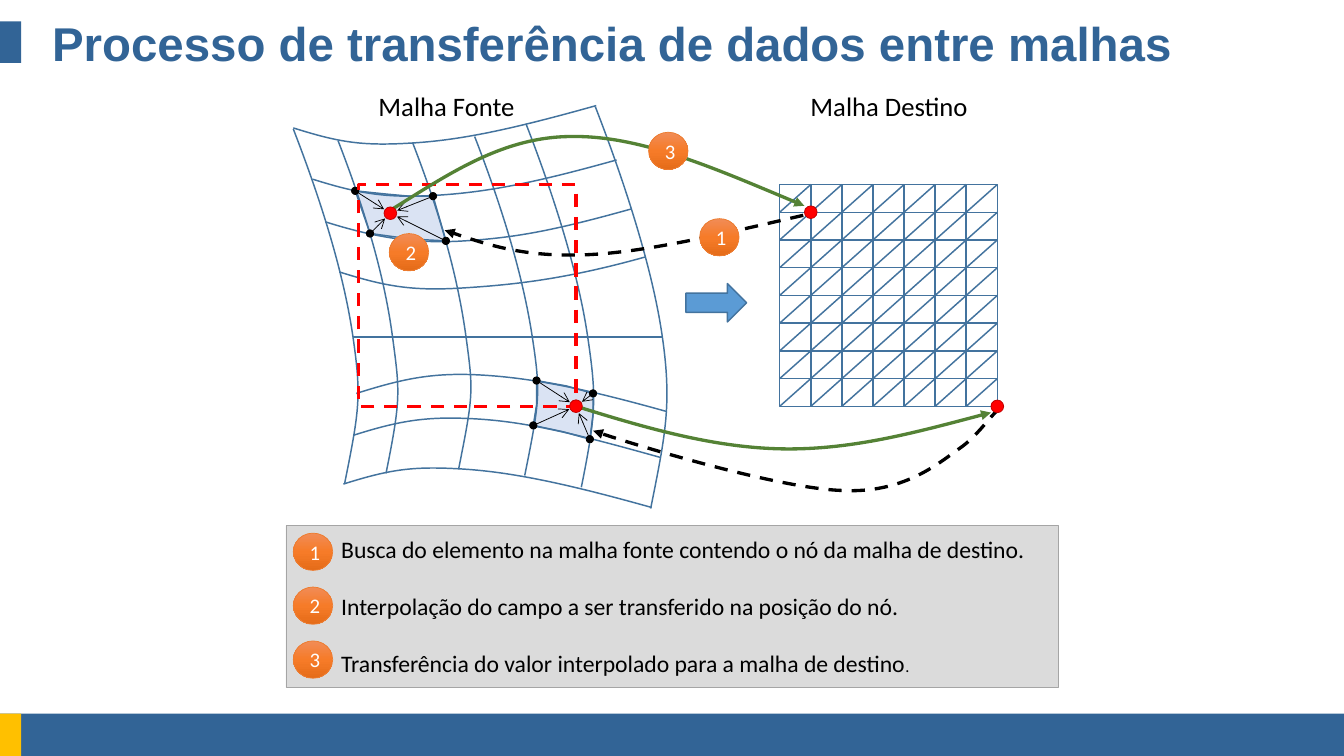
import math
from copy import deepcopy

from lxml import etree
from pptx import Presentation
from pptx.dml.color import RGBColor
from pptx.enum import dml, shapes, text
from pptx.oxml import ns
from pptx.util import Pt

COLORS = {
    "navy": "326496", "gold": "FFC000", "white": "FFFFFF", "black": "000000",
    "panel": "DBDBDB", "panel_edge": "A5A5A5", "mesh": "43739E", "element": "DAE3F3",
    "arrow": "5B9BD5", "red": "FF0000", "dark_red": "C00000", "green": "548235",
    "orange": "ED7D31", "orange_top": "F18C57", "orange_mid": "F67B28", "orange_low": "E56C19",
}
STEPS = [
    "Busca do elemento na malha fonte contendo o nó da malha de destino.",
    "Interpolação do campo a ser transferido na posição do nó.",
    "Transferência do valor interpolado para a malha de destino",
]
FIGURE = (198, 71)
MESH_MIDDLE = 156.5
# Columns: start, middle x, middle handle, end
MESH_COLUMNS = [
    ((0, 16.1), 40.3, (5.8, 40.3), (34.6, 255.9)),
    ((30.2, 24), 67, (5, 37.4), (62.6, 248.7)),
    ((80.6, 25.5), 116.6, (5, 36.7), (111.6, 245.8)),
    ((122.4, 21.2), 161.3, (5.8, 38.2), (156.2, 250.1)),
    ((157, 12.5), 198.7, (6, 41), (194.4, 258)),
    ((203.8, 1), 249.1, (6.5, 45.4), (241.2, 272.4)),
]
# Rows: start, middle, end
MESH_ROWS = [
    ((0, 15.4), (81.4, 25.5), (204.5, 0.3)),
    ((13, 50), (97.9, 60.8), (218.2, 37)),
    ((21.6, 78.8), (115.2, 91.7), (228.2, 70.1)),
    ((31, 112.6), (115.2, 123.4), (237.6, 102.5)),
    ((42.5, 194.7), (128.9, 182.4), (252, 206.9)),
    ((41, 222.8), (125.3, 212), (247.7, 237.9)),
    ((33.8, 255.9), (115.2, 245.8), (241.9, 271.7)),
]
# Elements: outline, indexes of the corners, interpolated node
ELEMENTS = [
    ([(41.8, 57.9), (61.9, 60), (77.8, 61.5), (94.3, 61.5), (103, 91.7), (89.3, 91),
      (72.7, 89.6), (51.8, 86.7)], (0, 3, 4, 7), (65.5, 73)),
    ([(164.2, 186), (184.3, 189.6), (202.3, 194.7), (202.3, 209.1), (200.2, 225.6),
      (182.2, 220.6), (162, 216.3), (164.2, 202.6)], (0, 2, 4, 6), (190.8, 203.3)),
]
SEARCHES = [
    [(344.2, 74.4), (290.9, 86.7), (237.6, 99.6), (196.6, 101.1), (156.2, 102.5),
     (129.6, 93.9), (102.2, 84.5)],
    [(477.4, 204.8), (471.6, 207.6), (463, 222.8), (449.3, 232.1), (434.2, 242.9),
     (411.1, 262.4), (370.1, 260.2), (329, 258.8), (229, 229.2), (202.3, 219.9)],
]
TRANSFERS = [
    [(67, 70.1), (105.1, 46.4), (141.8, 21.2), (187.9, 21.2), (234.7, 20.4),
     (289.4, 44.9), (344.9, 68)],
    [(190.8, 203.3), (236.9, 217.7), (283.7, 231.4), (330.5, 232.1), (377.3, 232.8),
     (424.1, 219.9), (470.9, 207.6)],
]
DOMAIN = (146.9, 149.8)
GRID_COLUMNS, GRID_ROWS = 7, 8


def rgb(name):
    return RGBColor.from_string(COLORS[name])


def shift(origin, point):
    return origin[0] + point[0], origin[1] + point[1]


def style(part, fill=None, line=None, width=1, dash=False, tail=None):
    part.shadow.inherit = False
    if fill:
        part.fill.solid()
        part.fill.fore_color.rgb = rgb(fill)
    else:
        part.fill.background()
    style_line(part, line, width, dash, tail)


def style_line(part, color, width, dash=False, tail=None):
    if not color:
        part.line.fill.background()
        return
    part.line.color.rgb = rgb(color)
    part.line.width = Pt(width)
    if dash:
        part.line.dash_style = dml.MSO_LINE.DASH
    if tail:
        ln = part._element.spPr.find(ns.qn("a:ln"))
        etree.SubElement(ln, ns.qn("a:tailEnd"), type=tail)


def add_preset(slide, kind, box, **look):
    part = slide.shapes.add_shape(kind, *map(Pt, box))
    style(part, **look)
    return part


def add_rect(slide, box, **look):
    return add_preset(slide, shapes.MSO_SHAPE.RECTANGLE, box, **look)


def add_dot(slide, center, size, **look):
    box = (center[0] - size / 2, center[1] - size / 2, size, size)
    add_preset(slide, shapes.MSO_SHAPE.OVAL, box, **look)


def add_line(slide, start, end, color="mesh", width=1, tail=None):
    line = slide.shapes.add_connector(shapes.MSO_CONNECTOR.STRAIGHT, *map(Pt, (*start, *end)))
    style_line(line, color, width, tail=tail)
    etree.SubElement(line._element.spPr, ns.qn("a:effectLst"))
    return line


def add_outline(slide, origin, points, closed=False, **look):
    start, *rest = [tuple(map(Pt, shift(origin, p))) for p in points]
    builder = slide.shapes.build_freeform(*start)
    builder.add_line_segments(rest, close=closed)
    outline = builder.convert_to_shape()
    style(outline, **look)
    return outline


def add_curve(slide, origin, points, **look):
    """Draw a Bézier chain: a start, then two handles and an end per segment."""
    curve = add_outline(slide, origin, points, **look)
    steps = list(curve._element.iter(ns.qn("a:lnTo")))
    for first, second, third in zip(steps[::3], steps[1::3], steps[2::3]):
        first.tag = ns.qn("a:cubicBezTo")
        for step in (second, third):
            first.append(step[0])
            step.getparent().remove(step)


def add_text(frame, content, size=18, font="Calibri", color="black", bold=False, align=None,
             anchor=text.MSO_ANCHOR.TOP, wrap=True, gap=0):
    """Write one paragraph per item of content."""
    frame.word_wrap, frame.vertical_anchor = wrap, anchor
    for index, words in enumerate(content):
        paragraph = frame.add_paragraph() if index else frame.paragraphs[0]
        if index and gap:
            paragraph.space_before = Pt(gap)
        paragraph.alignment = align
        run = paragraph.add_run()
        run.text = words
        run.font.size, run.font.name, run.font.bold = Pt(size), font, bold
        run.font.color.rgb = rgb(color)


def add_textbox(slide, box, content, **form):
    frame = slide.shapes.add_textbox(*map(Pt, box)).text_frame
    add_text(frame, content, **form)
    return frame


def add_badge(slide, corner, number):
    badge = add_preset(slide, shapes.MSO_SHAPE.OVAL, (*corner, 26.6, 25.2), line="orange", width=0.5)
    badge.fill.gradient()
    badge.fill.gradient_angle = 270
    stops = badge._element.spPr.find(".//" + ns.qn("a:gsLst"))
    stops.append(deepcopy(stops[0]))
    for index, name in enumerate(("orange_top", "orange_mid", "orange_low")):
        stop = badge.fill.gradient_stops[index]
        stop.color.rgb, stop.position = rgb(name), index / 2
    add_text(badge.text_frame, [str(number)], size=14, color="white",
             align=text.PP_ALIGN.CENTER, anchor=text.MSO_ANCHOR.MIDDLE)


def add_frame(slide, width, height):
    footer = height - 28.6
    add_rect(slide, (0, footer, width, 28.6), fill="navy")
    add_rect(slide, (0, footer, 14.4, 28.6), fill="gold")
    add_rect(slide, (0, 14.4, 14.4, 28.1), fill="navy")
    add_textbox(slide, (28.1, 14.4, 850.3, 28.1), ["Processo de transferência de dados entre malhas"],
                size=32, font="Arial", color="navy", bold=True, anchor=text.MSO_ANCHOR.MIDDLE)


def add_source_mesh(slide, origin):
    for outline, _, _ in ELEMENTS:
        add_outline(slide, origin, outline, closed=True, fill="element", line="mesh")
    lines = [(start, (x, MESH_MIDDLE), end, (20.5, 53), handle, (10.1, -50.4))
             for start, x, handle, end in MESH_COLUMNS]
    for start, middle, end in MESH_ROWS:
        side = 1 if middle[1] < MESH_MIDDLE else -1
        lines.append((start, middle, end, (31.7, 10 * side), (34.5, -2.2 * side), (-53.6, 15 * side)))
    for start, middle, end, leave, (dx, dy), arrive in lines:
        add_curve(slide, origin, [start, shift(start, leave), shift(middle, (-dx, -dy)), middle,
                                  shift(middle, (dx, dy)), shift(end, arrive), end], line="mesh")
    add_line(slide, *(shift(origin, (MESH_COLUMNS[i][1], MESH_MIDDLE)) for i in (0, -1)))
    for outline, corners, node in ELEMENTS:
        for x, y in (outline[corner] for corner in corners):
            dx, dy = node[0] - x, node[1] - y
            reach = math.hypot(dx, dy)
            ends = [(x + dx * part, y + dy * part) for part in (2.5 / reach, 1 - 5 / reach)]
            add_dot(slide, shift(origin, (x, y)), 5, fill="black", line="black", width=0.5)
            add_line(slide, *(shift(origin, p) for p in ends), color="black", width=0.5, tail="arrow")
    add_rect(slide, (*shift(origin, (43.9, 53.6)), *DOMAIN), line="red", width=2.25, dash=True)


def add_target_mesh(slide, origin):
    """Draw the triangulated grid and return the places of its two marked nodes."""
    def node(column, row):
        return shift(origin, (column * DOMAIN[0] / GRID_COLUMNS, row * DOMAIN[1] / GRID_ROWS))

    border = add_rect(slide, (*origin, *DOMAIN), line="mesh")
    for k in range(1, GRID_COLUMNS + GRID_ROWS):
        add_line(slide, node(max(0, k - GRID_ROWS), min(k, GRID_ROWS)),
                 node(min(k, GRID_COLUMNS), max(0, k - GRID_COLUMNS)))
    for row in range(1, GRID_ROWS):
        line = add_line(slide, node(0, row), node(GRID_COLUMNS, row))
        if row * 2 == GRID_ROWS:
            line.begin_connect(border, 1)
            line.end_connect(border, 3)
    for column in range(1, GRID_COLUMNS):
        add_line(slide, node(column, 0), node(column, GRID_ROWS))
    return [node(1, 1), node(GRID_COLUMNS, GRID_ROWS)]


def add_figure(slide, origin):
    add_source_mesh(slide, origin)
    add_preset(slide, shapes.MSO_SHAPE.RIGHT_ARROW, (*shift(origin, (265, 120.5)), 41, 25.9),
               fill="arrow", line="mesh")
    nodes = add_target_mesh(slide, shift(origin, (328.3, 53.6)))
    for search, transfer in zip(SEARCHES, TRANSFERS):
        add_curve(slide, origin, transfer, line="green", width=2.25, tail="triangle")
        add_curve(slide, origin, search, line="black", width=2.25, dash=True, tail="triangle")
    for center in nodes + [shift(origin, node) for _, _, node in ELEMENTS]:
        add_dot(slide, center, 8.6, fill="red", line="dark_red", width=0.5)
    for number, corner in enumerate([(274.3, 76.6), (64.8, 86.7), (239.8, 18.3)], 1):
        add_badge(slide, shift(origin, corner), number)
    for words, x, width in (("Malha Fonte", 50.4, 108), ("Malha Destino", 342, 122.4)):
        add_textbox(slide, (*shift(origin, (x, -14.1)), width, 29), [words], wrap=False)


def add_legend(slide, box):
    add_rect(slide, box, fill="panel", line="panel_edge", width=0.5)
    for index in range(len(STEPS)):
        add_badge(slide, shift(box, (5, 5 + 36.4 * index)), index + 1)
    frame = add_textbox(slide, (*shift(box, (30.2, 2.8)), 486, 104.4), STEPS, size=16, gap=19.2)
    stop = frame.paragraphs[-1].add_run()
    stop.text = "."
    stop.font.size, stop.font.name = Pt(11), "Calibri"
    stop.font.color.rgb = rgb("black")


def main():
    deck = Presentation()
    width, height = 907.2, 510.5
    deck.slide_width, deck.slide_height = Pt(width), Pt(height)
    slide = deck.slides.add_slide(deck.slide_layouts[6])
    add_frame(slide, width, height)
    add_figure(slide, FIGURE)
    add_legend(slide, (193, 355, 521.3, 109.4))
    deck.save("out.pptx")


if __name__ == "__main__":
    main()
